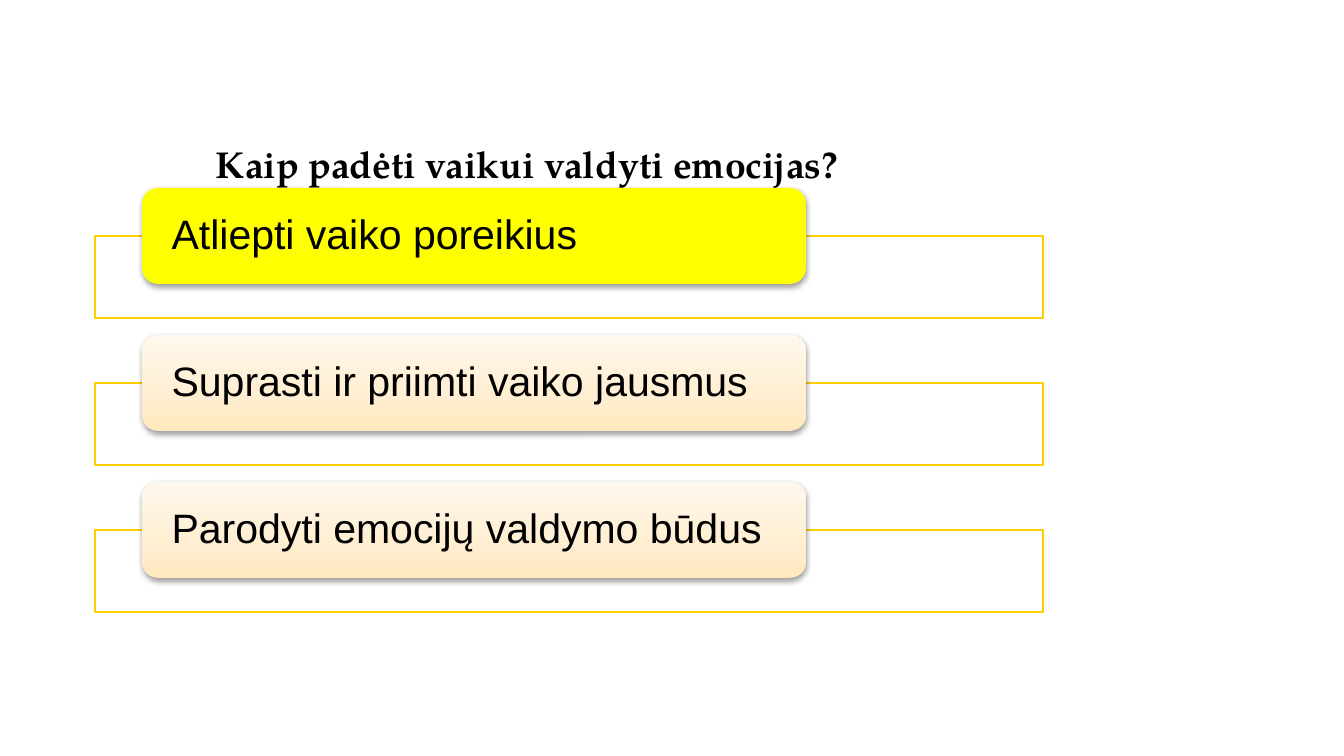
from copy import deepcopy

from lxml import etree
from pptx import Presentation
from pptx.dml.color import RGBColor
from pptx.enum.shapes import MSO_SHAPE
from pptx.enum.text import MSO_ANCHOR, MSO_AUTO_SIZE, PP_ALIGN
from pptx.oxml.ns import qn
from pptx.util import Emu, Pt

RECT = MSO_SHAPE.RECTANGLE
ROUND = MSO_SHAPE.ROUNDED_RECTANGLE
MIDDLE = MSO_ANCHOR.MIDDLE
LEFT = PP_ALIGN.LEFT
NO_FIT = MSO_AUTO_SIZE.NONE

TITLE = "Kaip padėti vaikui valdyti emocijas?"
STEPS = [
    "Atliepti vaiko poreikius",
    "Suprasti ir priimti vaiko jausmus",
    "Parodyti emocijų valdymo būdus",
]
CREAM = [(0, "FFE8BD"), (0.35, "FFEED1"), (1, "FFF8EE")]
TOP, PITCH = 188, 147


def px(n):
    return Emu(round(n * 914400 / 134.4))


def color(code):
    return RGBColor.from_string(code)


def place(shape, x, y, w, h):
    shape.left, shape.top = px(x), px(y)
    shape.width, shape.height = px(w), px(h)


def write(shape, text, font="Arial", size=22, bold=False, side=13, edge=0,
          space=1.0):
    frame = shape.text_frame
    frame.word_wrap = True
    frame.auto_size = NO_FIT
    frame.vertical_anchor = MIDDLE
    frame.margin_left = frame.margin_right = px(side)
    frame.margin_top = frame.margin_bottom = px(edge)
    para = frame.paragraphs[0]
    para.alignment = LEFT
    para.line_spacing = space
    run = para.add_run()
    run.text = text
    run.font.name = font
    run.font.size = Pt(size)
    run.font.bold = bold
    run.font.color.rgb = color("000000")


def fade(fill, stops):
    """Fill upwards from the first stop to the last."""
    fill.gradient()
    fill.gradient_angle = 90
    first = fill._xPr.find(".//" + qn("a:gs"))
    first.addnext(deepcopy(first))
    for stop, (pos, code) in zip(fill.gradient_stops, stops):
        stop.position = pos
        stop.color.rgb = color(code)


def alpha(node, share):
    etree.SubElement(node, qn("a:alpha"), val=str(share * 1000))


def shade(shape):
    """Add a soft shadow below the shape."""
    effects = shape._element.spPr.find(qn("a:effectLst"))
    outer = etree.SubElement(effects, qn("a:outerShdw"), blurRad="40000",
                             dist="20000", dir="5400000", rotWithShape="0")
    alpha(etree.SubElement(outer, qn("a:srgbClr"), val="000000"), 38)


def add_frame(slide, y):
    box = slide.shapes.add_shape(RECT, px(95), px(y), px(948), px(82))
    box.shadow.inherit = False
    box.fill.solid()
    box.fill.fore_color.rgb = color("FFFFFF")
    alpha(box._element.spPr.find(".//" + qn("a:srgbClr")), 90)
    box.line.color.rgb = color("FFCD00")
    box.line.width = Pt(0.75)


def add_card(slide, y, text, active):
    card = slide.shapes.add_shape(ROUND, px(142), px(y), px(664), px(96))
    card.shadow.inherit = False
    card.line.fill.background()
    if active:
        card.fill.solid()
        card.fill.fore_color.rgb = color("FFFF00")
    else:
        fade(card.fill, CREAM)
    shade(card)
    write(card, text, side=25, space=0.9)


def main():
    deck = Presentation()
    deck.slide_width, deck.slide_height = px(1344), px(756)
    slide = deck.slides.add_slide(deck.slide_layouts[5])
    title = slide.shapes.title
    place(title, 203, 132, 1001, 64)
    write(title, TITLE, font="TeX Gyre Pagella", size=20, bold=True, edge=13)
    for i, step in enumerate(STEPS):
        y = TOP + i * PITCH
        add_frame(slide, y + 48)
        add_card(slide, y, step, active=i == 0)
    deck.save("out.pptx")


if __name__ == "__main__":
    main()
